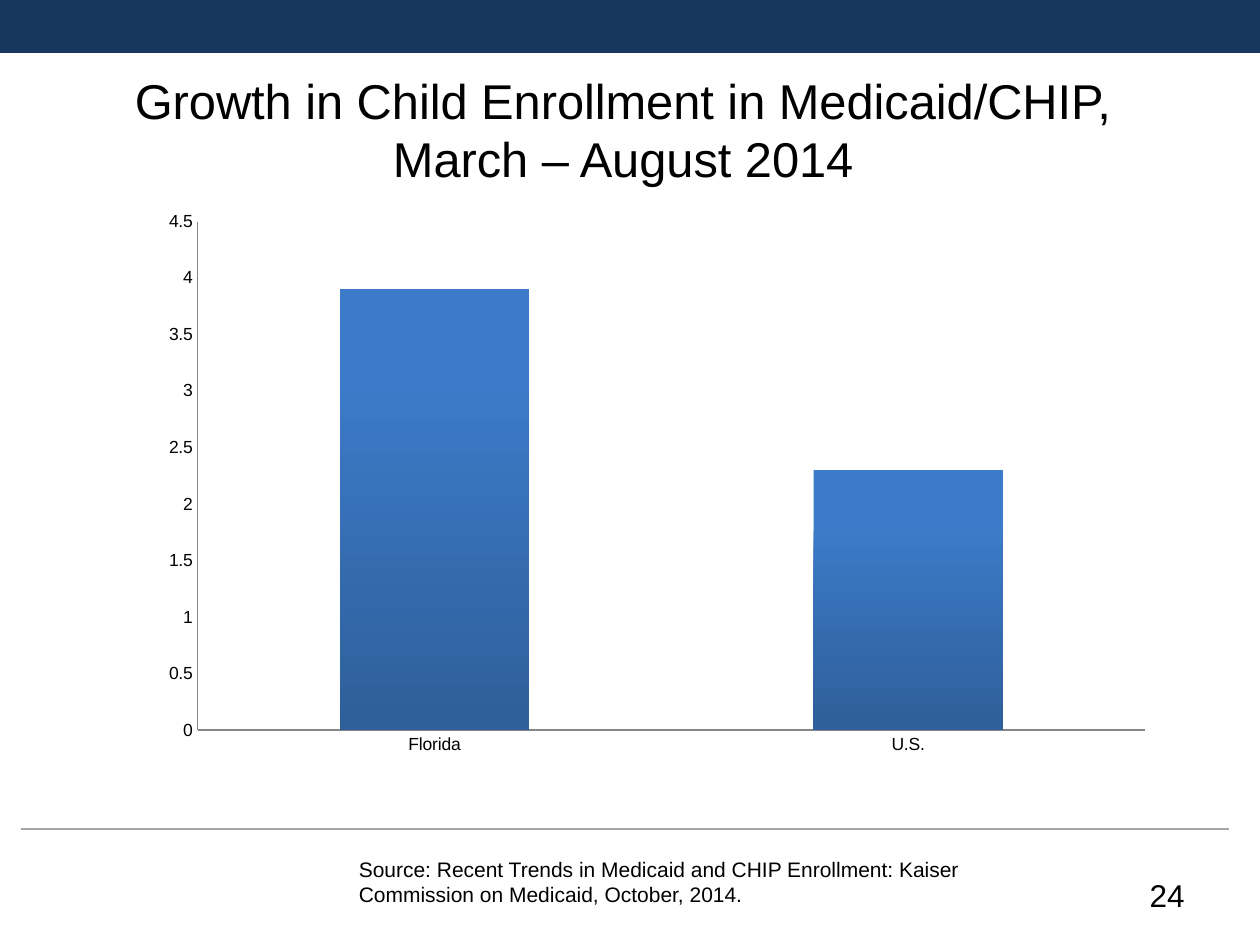
from lxml import etree
from pptx import Presentation
from pptx.chart.data import CategoryChartData
from pptx.dml.color import RGBColor
from pptx.enum.chart import XL_CHART_TYPE, XL_TICK_MARK
from pptx.enum.shapes import MSO_CONNECTOR, MSO_SHAPE
from pptx.enum.text import MSO_ANCHOR, PP_ALIGN
from pptx.oxml.ns import qn
from pptx.util import Inches, Pt

COLUMNS = XL_CHART_TYPE.COLUMN_CLUSTERED
NO_TICK = XL_TICK_MARK.NONE
LEFT, CENTER, RIGHT = PP_ALIGN.LEFT, PP_ALIGN.CENTER, PP_ALIGN.RIGHT
TOP, MIDDLE = MSO_ANCHOR.TOP, MSO_ANCHOR.MIDDLE

FONT = "Arial"
COLORS = {"band": "17375E", "rule": "A6A6A6", "text": "000000",
          "axis": "868686", "bar_top": "3C7BC9", "bar_bottom": "2E5F99"}
TITLE = "Growth in Child Enrollment in Medicaid/CHIP, \vMarch – August 2014 "
SOURCE = ("Source: Recent Trends in Medicaid and CHIP Enrollment: "
          "Kaiser Commission on Medicaid, October, 2014.")
PAGE = "24"
GROWTH = {"Florida": 3.9, "U.S.": 2.3}


def color(name):
    return RGBColor.from_string(COLORS[name])


def box(*inches):
    return [Inches(v) for v in inches]


def add_text(s, text, at, size, align=LEFT, anchor=TOP):
    tf = s.shapes.add_textbox(*box(*at)).text_frame
    tf.word_wrap = True
    tf.vertical_anchor = anchor
    p = tf.paragraphs[0]
    p.text = text
    p.alignment = align
    for r in p.runs:
        r.font.name = FONT
        r.font.size = Pt(size)
        r.font.color.rgb = color("text")


def add_frame(s):
    band = s.shapes.add_shape(MSO_SHAPE.RECTANGLE, *box(0, 0, 10, 0.42))
    band.shadow.inherit = False
    band.fill.solid()
    band.fill.fore_color.rgb = color("band")
    band.line.fill.background()
    rule = s.shapes.add_connector(MSO_CONNECTOR.STRAIGHT, *box(0.17, 6.58, 9.75, 6.58))
    rule.line.color.rgb = color("rule")
    rule.line.width = Pt(0.75)
    etree.SubElement(rule._element.spPr, qn("a:effectLst"))


def add_growth_chart(s):
    data = CategoryChartData()
    data.categories = list(GROWTH)
    data.add_series("Series 1", list(GROWTH.values()))
    chart = s.shapes.add_chart(COLUMNS, *box(1.18, 1.59, 8.07, 4.49), data).chart
    chart.has_legend = False
    chart.has_title = False
    chart.font.name = FONT
    chart.font.size = Pt(10)
    chart.font.color.rgb = color("text")

    for axis in (chart.category_axis, chart.value_axis):
        axis.has_major_gridlines = False
        axis.major_tick_mark = axis.minor_tick_mark = NO_TICK
        axis.format.line.color.rgb = color("axis")
        axis.format.line.width = Pt(0.75)
    chart.value_axis.minimum_scale = 0
    chart.value_axis.maximum_scale = 4.5
    chart.value_axis.major_unit = 0.5

    plot = chart.plots[0]
    plot.gap_width = 150
    plot.vary_by_categories = False
    fill = plot.series[0].format.fill
    fill.gradient()
    fill.gradient_angle = 270
    for stop, (name, position) in zip(fill.gradient_stops,
                                      [("bar_top", 0.2), ("bar_bottom", 1)]):
        stop.color.rgb = color(name)
        stop.position = position


def main():
    prs = Presentation()
    prs.slide_width, prs.slide_height = box(10, 7.5)
    s = prs.slides.add_slide(prs.slide_layouts[6])
    add_frame(s)
    add_text(s, TITLE, (0.5, 0.5, 9, 1.05), 27.9, align=CENTER, anchor=MIDDLE)
    add_text(s, SOURCE, (2.75, 6.75, 5.5, 0.5), 12)
    add_text(s, PAGE, (7.17, 6.9, 2.33, 0.4), 18, align=RIGHT)
    add_growth_chart(s)
    prs.save("out.pptx")


if __name__ == "__main__":
    main()
